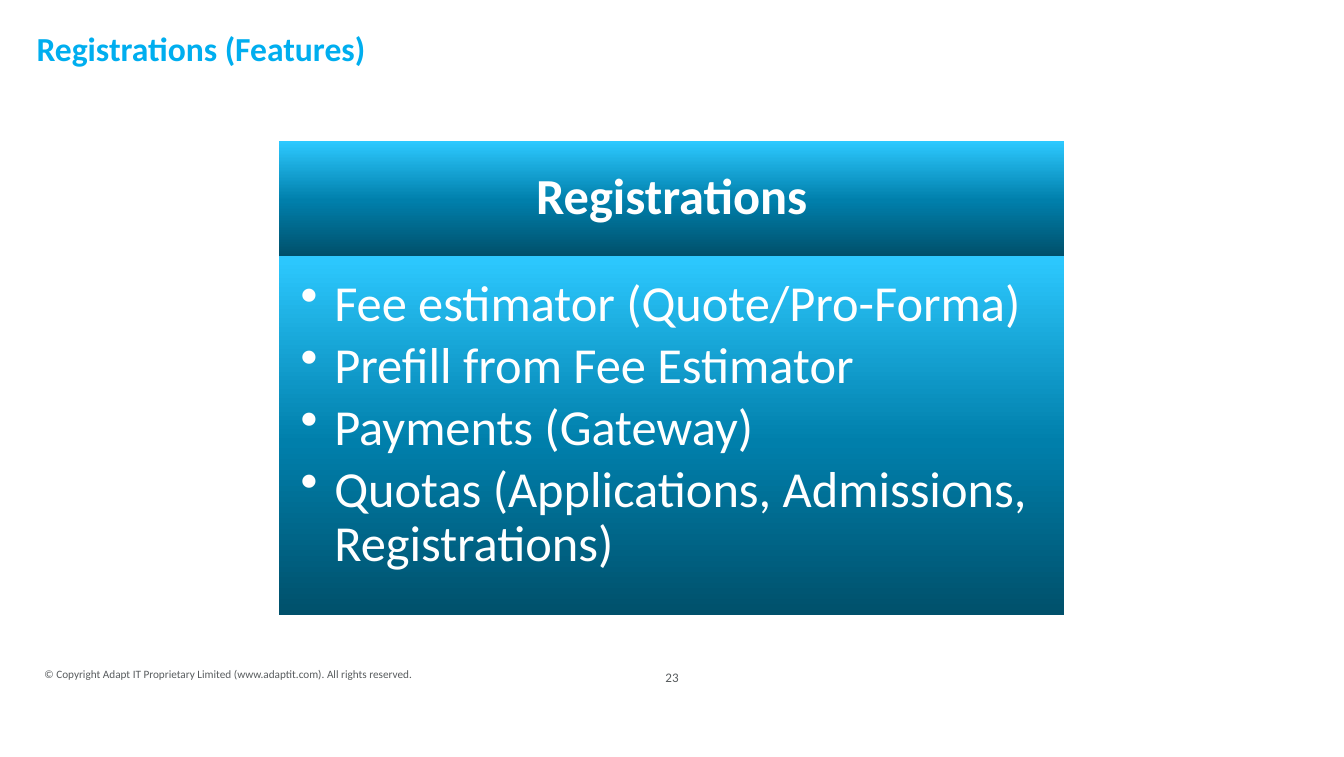
from copy import deepcopy

from pptx import Presentation
from pptx.dml.color import RGBColor
from pptx.enum.shapes import MSO_SHAPE
from pptx.enum.text import MSO_ANCHOR, PP_ALIGN
from pptx.oxml.ns import qn
from pptx.util import Pt

TITLE_BLUE = RGBColor(0x00, 0xAE, 0xEF)
FOOTER_GREY = RGBColor(0x58, 0x5C, 0x5E)
WHITE = RGBColor(0xFF, 0xFF, 0xFF)
GRADIENT = [
    (0, RGBColor(0x00, 0x50, 0x6B)),
    (0.48, RGBColor(0x00, 0x7F, 0xAB)),
    (1, RGBColor(0x2D, 0xC9, 0xFF)),
]
FONT = "Calibri"

TITLE = "Registrations (Features)"
HEADING = "Registrations"
FEATURES = [
    "Fee estimator (Quote/Pro-Forma)",
    "Prefill from Fee Estimator",
    "Payments (Gateway)",
    "Quotas (Applications, Admissions, Registrations)",
]
COPYRIGHT = "© Copyright Adapt IT Proprietary Limited (www.adaptit.com). All rights reserved."
PAGE_NUMBER = "23"

SLIDE_WIDTH, SLIDE_HEIGHT = 720, 405.36
CARD_LEFT, CARD_TOP, CARD_WIDTH = 149.6, 75.6, 420.5
HEADING_HEIGHT, BODY_HEIGHT = 61.5, 192.3
BULLET_INDENT = 18


def write(shape, lines, size, color, bold=False, align=PP_ALIGN.LEFT,
          anchor=MSO_ANCHOR.MIDDLE, margins=(0, 0, 0, 0)):
    """Fill a shape with uniformly styled paragraphs; margins are left, top, right, bottom."""
    frame = shape.text_frame
    frame.word_wrap = True
    frame.vertical_anchor = anchor
    (frame.margin_left, frame.margin_top,
     frame.margin_right, frame.margin_bottom) = map(Pt, margins)
    frame.text = "\n".join(lines)
    for para in frame.paragraphs:
        para.alignment = align
        for span in para.runs:
            span.font.name = FONT
            span.font.size = Pt(size)
            span.font.bold = bold
            span.font.color.rgb = color
    return frame.paragraphs


def add_label(page, place, text, size, color, **style):
    box = page.shapes.add_textbox(*map(Pt, place))
    return write(box, [text], size, color, **style)


def add_panel(page, top, height):
    panel = page.shapes.add_shape(
        MSO_SHAPE.RECTANGLE, Pt(CARD_LEFT), Pt(top), Pt(CARD_WIDTH), Pt(height))
    panel.shadow.inherit = False
    panel.line.fill.background()
    panel.fill.gradient()
    panel.fill.gradient_angle = 90
    stops = panel._element.spPr.find(".//" + qn("a:gsLst"))
    stops.append(deepcopy(stops[0]))
    for stop, (position, color) in zip(panel.fill.gradient_stops, GRADIENT):
        stop.position = position
        stop.color.rgb = color
    return panel


def add_bullet(para):
    properties = para._p.get_or_add_pPr()
    properties.set("marL", str(Pt(BULLET_INDENT)))
    properties.set("indent", str(-Pt(BULLET_INDENT)))
    properties.append(properties.makeelement(qn("a:buChar"), {"char": "•"}))


deck = Presentation()
deck.slide_width, deck.slide_height = Pt(SLIDE_WIDTH), Pt(SLIDE_HEIGHT)
page = deck.slides.add_slide(deck.slide_layouts[6])

add_label(page, (23.8, 344.5, 248.4, 33.1), COPYRIGHT, 6, FOOTER_GREY)
add_label(page, (310.3, 344.2, 99.4, 37.4), PAGE_NUMBER, 7, FOOTER_GREY,
          align=PP_ALIGN.CENTER)
title = add_label(page, (19.6, 6.1, 643, 38.2), TITLE, 18, TITLE_BLUE, bold=True)
title[0].line_spacing = Pt(22.6)

heading = add_panel(page, CARD_TOP, HEADING_HEIGHT)
heading_paras = write(heading, [HEADING], 27, WHITE, bold=True,
                      align=PP_ALIGN.CENTER, margins=(15, 8.6, 15, 8.6))
heading_paras[0].line_spacing = 0.9

body = add_panel(page, CARD_TOP + HEADING_HEIGHT, BODY_HEIGHT)
for para in write(body, FEATURES, 27, WHITE, anchor=MSO_ANCHOR.TOP,
                  margins=(11.5, 11.5, 15, 17.3)):
    add_bullet(para)
    para.line_spacing = 0.9
    para.space_after = Pt(4)

deck.save("out.pptx")
